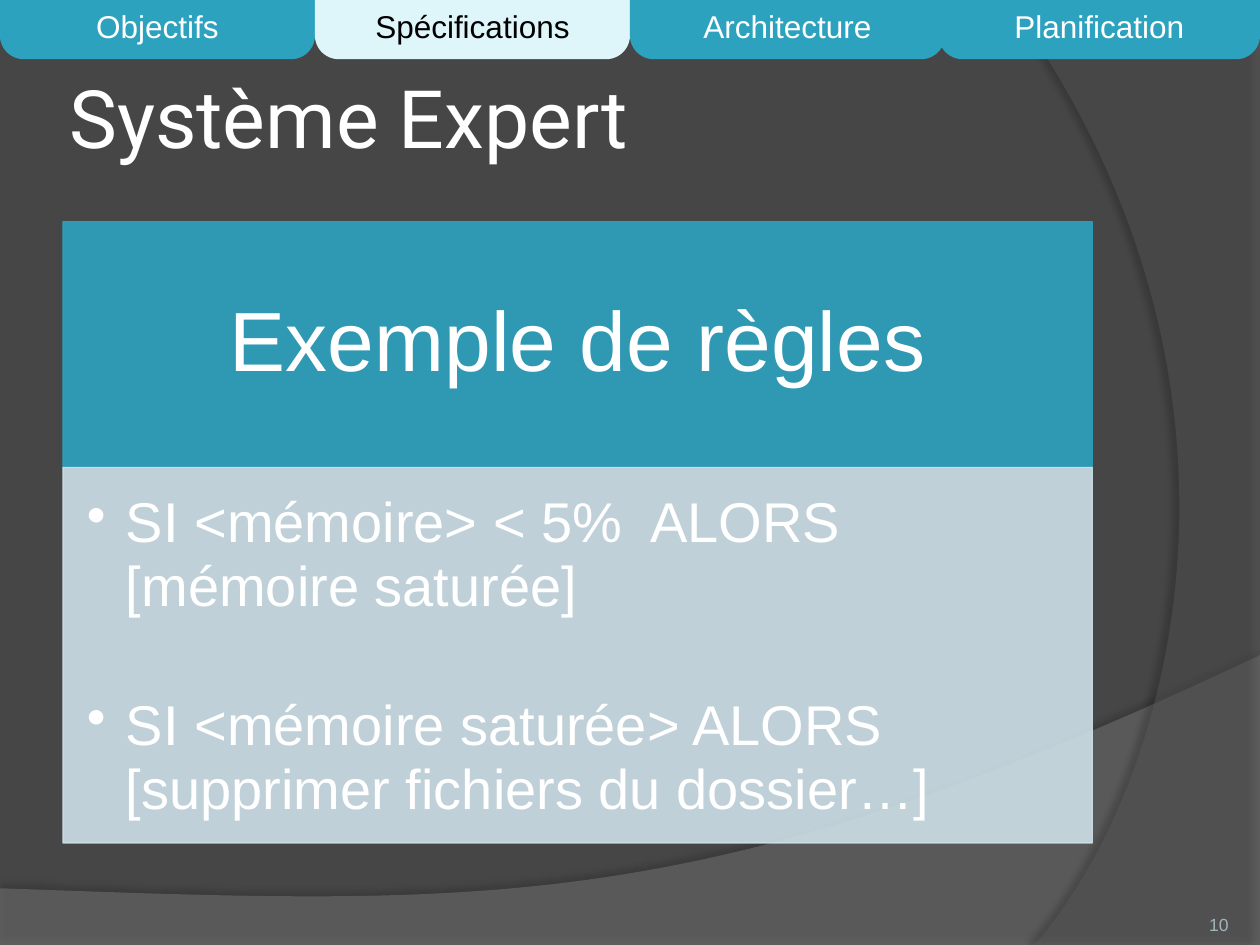
from dataclasses import dataclass

from lxml import etree
from pptx import Presentation
from pptx.dml.color import RGBColor
from pptx.enum.shapes import MSO_SHAPE
from pptx.enum.text import MSO_ANCHOR, PP_ALIGN
from pptx.oxml.ns import qn
from pptx.util import Inches, Pt

RECTANGLE = MSO_SHAPE.RECTANGLE
TAB = MSO_SHAPE.ROUND_2_SAME_RECTANGLE
LEFT, CENTER, RIGHT = PP_ALIGN.LEFT, PP_ALIGN.CENTER, PP_ALIGN.RIGHT
TOP, MIDDLE, BOTTOM = MSO_ANCHOR.TOP, MSO_ANCHOR.MIDDLE, MSO_ANCHOR.BOTTOM


@dataclass(frozen=True)
class Theme:
    background: str = "464646"
    wave: str = "7F7F7F"
    arc: str = "5E5E5E"
    shadow: str = "000000"
    accent: str = "2DA2BF"
    active_tab: str = "DEF5FA"
    active_text: str = "000000"
    panel: str = "CDE0E8"
    text: str = "FFFFFF"
    number: str = "A4B5B9"
    font: str = "Arial"
    title_font: str = "Roboto"
    title_size: int = 46
    heading_size: int = 48
    body_size: int = 32
    tab_size: int = 18
    number_size: int = 10


THEME = Theme()


def set_alpha(color, percent):
    """Make an RGB colour element partly transparent."""
    etree.SubElement(color, qn("a:alpha"), val=str(percent * 1000))


def paint(shape, color, opacity=100, outlined=False):
    shape.shadow.inherit = False
    shape.fill.solid()
    shape.fill.fore_color.rgb = RGBColor.from_string(color)
    if outlined:
        shape.line.color.rgb = RGBColor.from_string(color)
        shape.line.width = Pt(0.75)
    else:
        shape.line.fill.background()
    if opacity < 100:
        for rgb in shape._element.spPr.iter(qn("a:srgbClr")):
            set_alpha(rgb, opacity)


def add_shadow(shape, opacity, blur, distance, angle):
    effects = shape._element.spPr.find(qn("a:effectLst"))
    shadow = etree.SubElement(effects, qn("a:outerShdw"), blurRad=str(Pt(blur)),
                              dist=str(Pt(distance)), dir=str(angle * 60000),
                              algn="ctr", rotWithShape="0")
    set_alpha(etree.SubElement(shadow, qn("a:srgbClr"), val=THEME.shadow), opacity)


def add_bullet(paragraph, indent):
    properties = paragraph._p.get_or_add_pPr()
    properties.set("marL", str(Inches(indent)))
    properties.set("indent", str(-Inches(indent)))
    etree.SubElement(properties, qn("a:buChar"), char="•")


def write_text(shape, *lines, size, color=THEME.text, font=THEME.font, align=CENTER,
               anchor=MIDDLE, insets=(0.1, 0.05, 0.1, 0.05), spacing=None,
               gap=0, bullet_indent=None):
    """Write one paragraph per line, with a gap in points between paragraphs."""
    frame = shape.text_frame
    frame.word_wrap = True
    frame.vertical_anchor = anchor
    (frame.margin_left, frame.margin_top,
     frame.margin_right, frame.margin_bottom) = map(Inches, insets)
    for index, line in enumerate(lines):
        paragraph = frame.add_paragraph() if index else frame.paragraphs[0]
        paragraph.alignment = align
        paragraph.line_spacing = spacing
        paragraph.space_before = Pt(gap if index else 0)
        if bullet_indent:
            add_bullet(paragraph, bullet_indent)
        run = paragraph.add_run()
        run.text = line
        run.font.size = Pt(size)
        run.font.name = font
        run.font.color.rgb = RGBColor.from_string(color)


def add_block(slide, kind, box, color, opacity=100, outlined=False):
    shape = slide.shapes.add_shape(kind, *map(Inches, box))
    paint(shape, color, opacity, outlined)
    return shape


def bezier(start, control_1, control_2, end, steps=60):
    """Points along a cubic curve, ends included."""
    points = []
    for step in range(steps + 1):
        t = step / steps
        weights = ((1 - t) ** 3, 3 * t * (1 - t) ** 2, 3 * t * t * (1 - t), t ** 3)
        points.append(tuple(
            sum(weight * value for weight, value in zip(weights, values))
            for values in zip(start, control_1, control_2, end)))
    return points


def add_curved_area(slide, left, top, corners, curve, color, opacity):
    """Straight corners closed by a curve, all relative to left and top."""
    points = [(Inches(left + x), Inches(top + y)) for x, y in corners + bezier(*curve)]
    builder = slide.shapes.build_freeform(*points[0])
    builder.add_line_segments(points[1:], close=True)
    shape = builder.convert_to_shape()
    paint(shape, color, opacity)
    return shape


def add_backdrop(slide, width, height):
    slide.background.fill.solid()
    slide.background.fill.fore_color.rgb = RGBColor.from_string(THEME.background)
    # Wave along the bottom
    top = 5.2
    depth = height - top
    wave = add_curved_area(
        slide, 0, top, [(0, 1.85), (0, depth), (width, depth)],
        [(width, 0), (5.59, 2.09), (3.91, 1.99), (0, 1.85)], THEME.wave, 45)
    add_shadow(wave, 35, blur=4, distance=3.5, angle=270)
    # Arc down the right side
    left = 8
    span = width - left
    arc = add_curved_area(
        slide, left, 0, [(span, 0.02), (span, height)],
        [(0.21, height), (1.35, 6.19), (2.18, 3), (0, 0)], THEME.arc, 40)
    add_shadow(arc, 45, blur=4, distance=4, angle=180)


def add_title(slide, box, text):
    title = slide.shapes.title
    title.left, title.top, title.width, title.height = map(Inches, box)
    write_text(title, text, size=THEME.title_size, font=THEME.title_font,
               align=LEFT, insets=(0.05,) * 4)


def add_rules_panel(slide, box, heading, rules):
    left, top, width, height = box
    heading_height = 1.95
    header = add_block(slide, RECTANGLE, (left, top, width, heading_height),
                       THEME.accent, opacity=90, outlined=True)
    write_text(header, heading, size=THEME.heading_size, spacing=0.9,
               insets=(0.37, 0.21, 0.37, 0.21))
    body = add_block(
        slide, RECTANGLE,
        (left, top + heading_height, width, height - heading_height),
        THEME.panel, opacity=90, outlined=True)
    write_text(body, *rules, size=THEME.body_size, align=LEFT, anchor=TOP,
               insets=(0.19, 0.19, 0.25, 0.28), spacing=0.95, gap=43,
               bullet_indent=0.31)


def add_tabs(slide, box, labels, active):
    left, top, width, height = box
    tab_width = width / len(labels)
    for index, label in enumerate(labels):
        # The last tab overlaps its neighbour a little
        overlap = 0.05 if index == len(labels) - 1 else 0
        tab_box = (left + index * tab_width - overlap, top, tab_width + overlap, height)
        is_active = label == active
        tab = add_block(slide, TAB, tab_box,
                        THEME.active_tab if is_active else THEME.accent)
        tab.adjustments[0], tab.adjustments[1] = 0, 0.4
        write_text(tab, label, size=THEME.tab_size,
                   color=THEME.active_text if is_active else THEME.text)


def add_slide_number(slide, box, number):
    shape = slide.shapes.add_textbox(*map(Inches, box))
    write_text(shape, number, size=THEME.number_size, color=THEME.number,
               align=RIGHT, anchor=BOTTOM, insets=(0,) * 4)


def main():
    width, height = 10, 7.5
    presentation = Presentation()
    presentation.slide_width, presentation.slide_height = Inches(width), Inches(height)
    slide = presentation.slides.add_slide(presentation.slide_layouts.get_by_name("Title Only"))
    add_backdrop(slide, width, height)
    add_title(slide, (0.5, 0.3, 8.17, 1.25), "Système Expert")
    add_rules_panel(slide, (0.5, 1.76, 8.17, 4.93), "Exemple de règles", [
        "SI <mémoire> < 5%  ALORS [mémoire saturée]",
        "SI <mémoire saturée> ALORS [supprimer fichiers du dossier…]",
    ])
    add_slide_number(slide, (8.92, 7.02, 0.83, 0.4), "10")
    add_tabs(slide, (0, 0, width, 0.47),
             ["Objectifs", "Spécifications", "Architecture", "Planification"],
             active="Spécifications")
    presentation.save("out.pptx")


if __name__ == "__main__":
    main()
